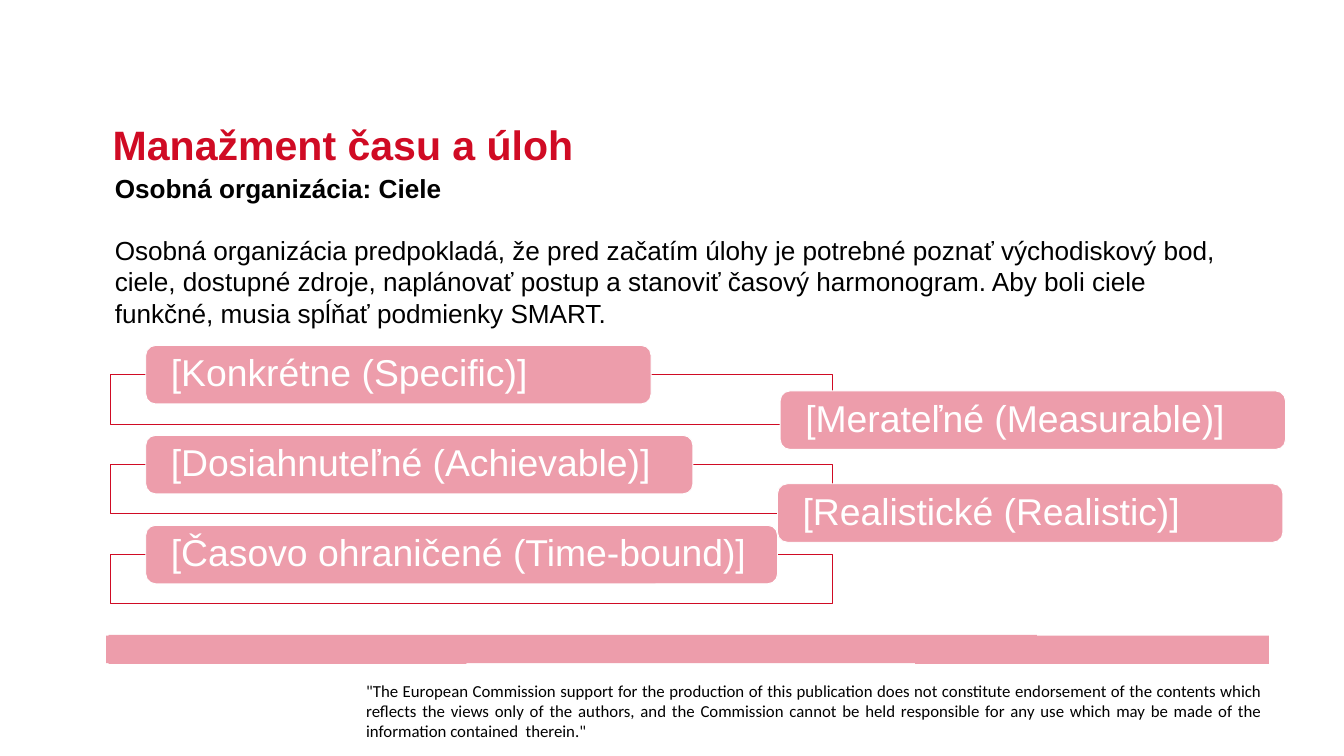
from lxml import etree
from pptx import Presentation
from pptx.dml.color import RGBColor
from pptx.enum import shapes, text
from pptx.oxml.ns import qn
from pptx.util import Cm, Pt

COLORS = {"red": "D00B24", "pink": "ED9DAB", "white": "FFFFFF", "black": "000000"}


def color(name):
    return RGBColor.from_string(COLORS[name])


def write(paragraph, words, size=28, font="Arial", fill="black", bold=False,
          align=text.PP_ALIGN.LEFT, spacing=None, before=0):
    """Put one formatted span of text into a paragraph."""
    paragraph.alignment = align
    paragraph.space_before = Pt(before)
    if spacing:
        paragraph.line_spacing = spacing
    span = paragraph.add_run()
    span.text = words
    span.font.size = Pt(size)
    span.font.name = font
    span.font.bold = bold
    span.font.color.rgb = color(fill)


class Page:
    """The current slide and the style of its elements (lengths in cm)."""

    def __init__(self, deck):
        self.slide = deck.slides.add_slide(deck.slide_layouts[5])
        self.shapes = self.slide.shapes

    def set_frame(self, box, insets, anchor=text.MSO_ANCHOR.TOP):
        frame = box.text_frame
        frame.word_wrap = True
        frame.auto_size = text.MSO_AUTO_SIZE.NONE
        frame.vertical_anchor = anchor
        (frame.margin_left, frame.margin_top,
         frame.margin_right, frame.margin_bottom) = map(Cm, insets)
        return frame

    def title(self, words, left, top, width, height):
        box = self.shapes.title
        box.left, box.top, box.width, box.height = map(Cm, (left, top, width, height))
        frame = self.set_frame(box, (0.25, 0.13, 0.25, 0.13))
        write(frame.paragraphs[0], words, size=44, fill="red", bold=True)

    def text_box(self, left, top, width, height, insets=(0.25, 0.13, 0.25, 0.13)):
        box = self.shapes.add_textbox(*map(Cm, (left, top, width, height)))
        return self.set_frame(box, insets)

    def outline(self, left, top, width, height):
        box = self.shapes.add_shape(shapes.MSO_SHAPE.RECTANGLE,
                                    *map(Cm, (left, top, width, height)))
        self.paint(box, "white", "red")
        fill = box.fill._xPr.find(qn("a:solidFill"))
        etree.SubElement(fill[0], qn("a:alpha"), val="90000")

    def label(self, words, left, top, width, height=2.21):
        box = self.shapes.add_shape(shapes.MSO_SHAPE.ROUNDED_RECTANGLE,
                                    *map(Cm, (left, top, width, height)))
        box.adjustments[0] = 0.167
        self.paint(box, "pink", "white")
        frame = self.set_frame(box, (0.84, 0.1, 0.71, 0.1), text.MSO_ANCHOR.MIDDLE)
        write(frame.paragraphs[0], words, size=40, fill="white", spacing=0.9)

    def band(self, points):
        corners = [(Cm(x), Cm(y)) for x, y in points]
        builder = self.shapes.build_freeform(*corners[0])
        builder.add_line_segments(corners[1:], close=True)
        self.paint(builder.convert_to_shape(), "pink")

    def paint(self, box, fill, line=None):
        box.shadow.inherit = False
        box.fill.solid()
        box.fill.fore_color.rgb = color(fill)
        if line:
            box.line.color.rgb = color(line)
            box.line.width = Pt(1)
        else:
            box.line.fill.background()


def main():
    deck = Presentation()
    deck.slide_width, deck.slide_height = Cm(50.8), Cm(28.58)
    page = Page(deck)

    # Footer band and disclaimer
    page.band([(47.96, 24.03), (39.19, 24.03), (39.19, 24), (4.11, 24),
               (4.11, 24.03), (4.01, 24.03), (4.01, 25.07), (4.11, 25.07),
               (4.11, 25.1), (17.63, 25.1), (17.63, 25.07), (34.59, 25.07),
               (34.59, 25.1), (47.96, 25.1)])
    disclaimer = page.text_box(13.84, 25.78, 33.86, 1.93, insets=(0, 0, 0, 0))
    write(disclaimer.paragraphs[0],
          '"The European Commission support for the production of this publication '
          "does not constitute endorsement of the contents which reflects the views "
          "only of the authors, and the Commission cannot be held responsible for any "
          'use which may be made of the information contained  therein."',
          size=18, font="Calibri", align=text.PP_ALIGN.JUSTIFY, spacing=0.98)

    # Title and introduction
    page.title("Manažment času a úloh", 4.01, 4.37, 24.49, 2.11)
    intro = page.text_box(4.09, 6.38, 42.77, 6.17)
    write(intro.paragraphs[0], "Osobná organizácia: Ciele", bold=True)
    write(intro.add_paragraph(),
          "Osobná organizácia predpokladá, že pred začatím úlohy je potrebné poznať "
          "východiskový bod, ciele, dostupné zdroje, naplánovať postup a stanoviť "
          "časový harmonogram. Aby boli ciele funkčné, musia spĺňať podmienky SMART.",
          before=33)

    # Goals on the left, each with an outlined bar behind it
    left_goals = [("[Konkrétne (Specific)]", 19.1),
                  ("[Dosiahnuteľné (Achievable)]", 20.68),
                  ("[Časovo ohraničené (Time-bound)]", 23.88)]
    for row, (words, width) in enumerate(left_goals):
        top = 13.06 + 3.4 * row
        page.outline(4.17, top + 1.09, 27.31, 1.88)
        page.label(words, 5.51, top, width)

    # Goals on the right
    page.label("[Merateľné (Measurable)]", 29.49, 14.78, 19.1)
    page.label("[Realistické (Realistic)]", 29.39, 18.29, 19.1)

    deck.save("out.pptx")


if __name__ == "__main__":
    main()
